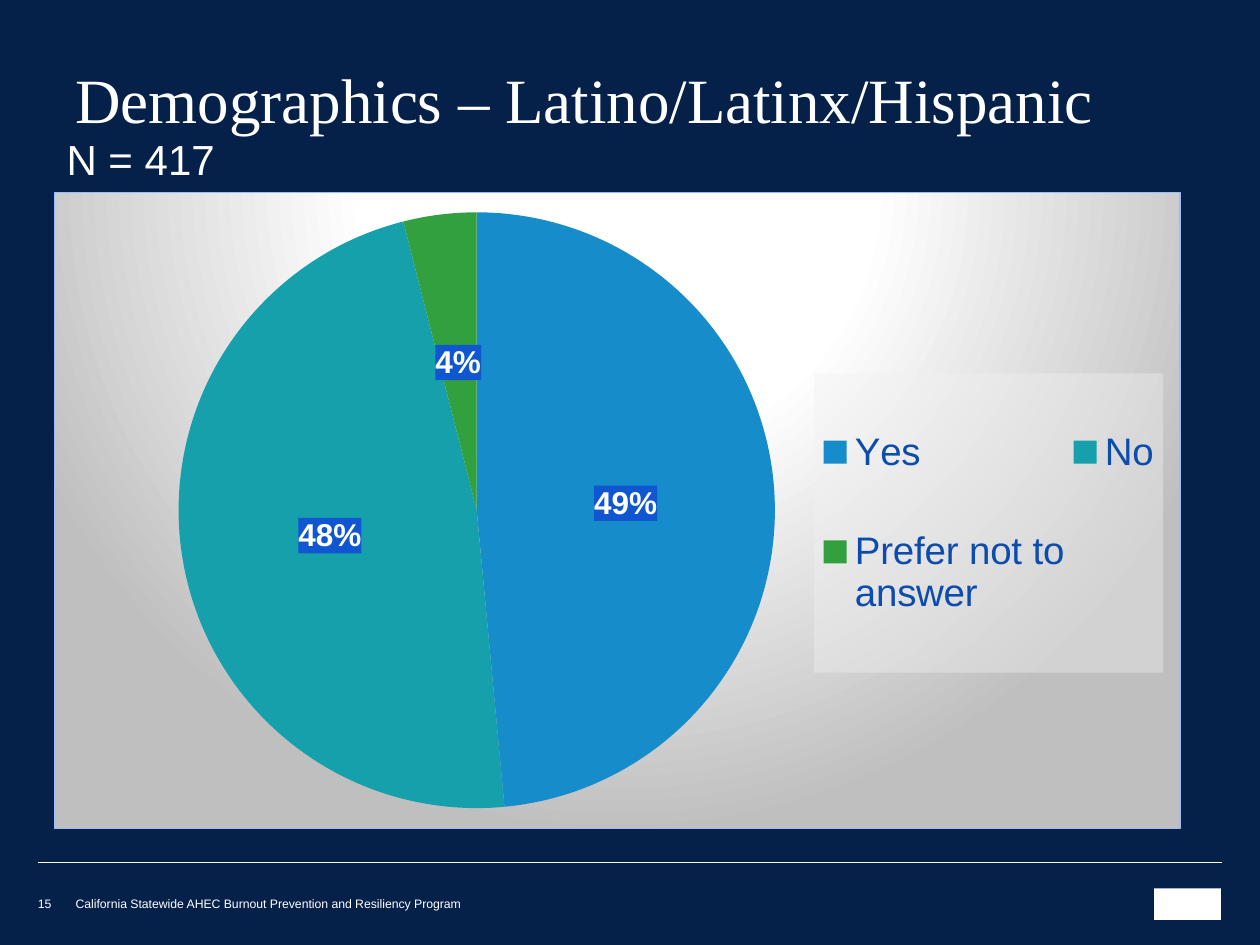
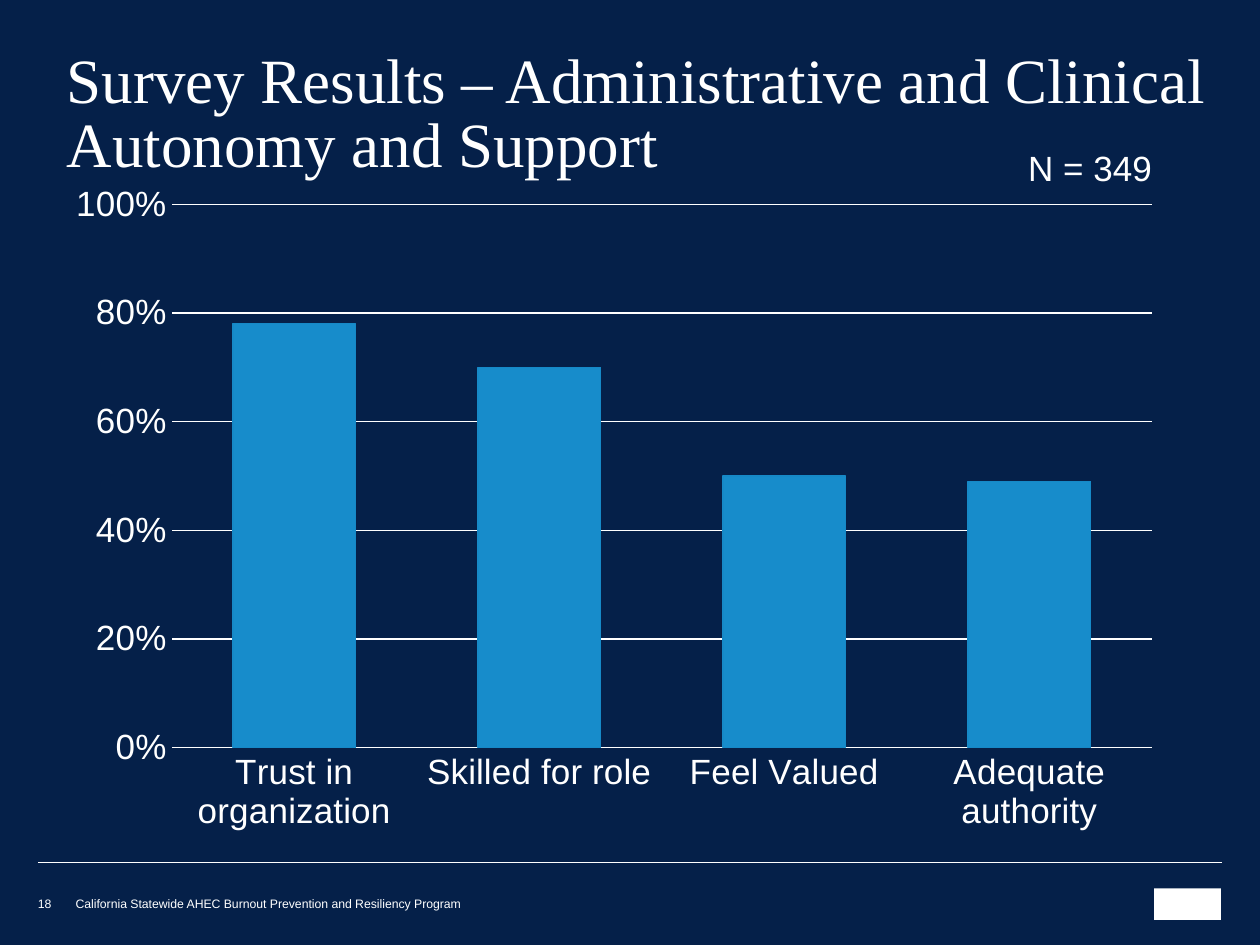
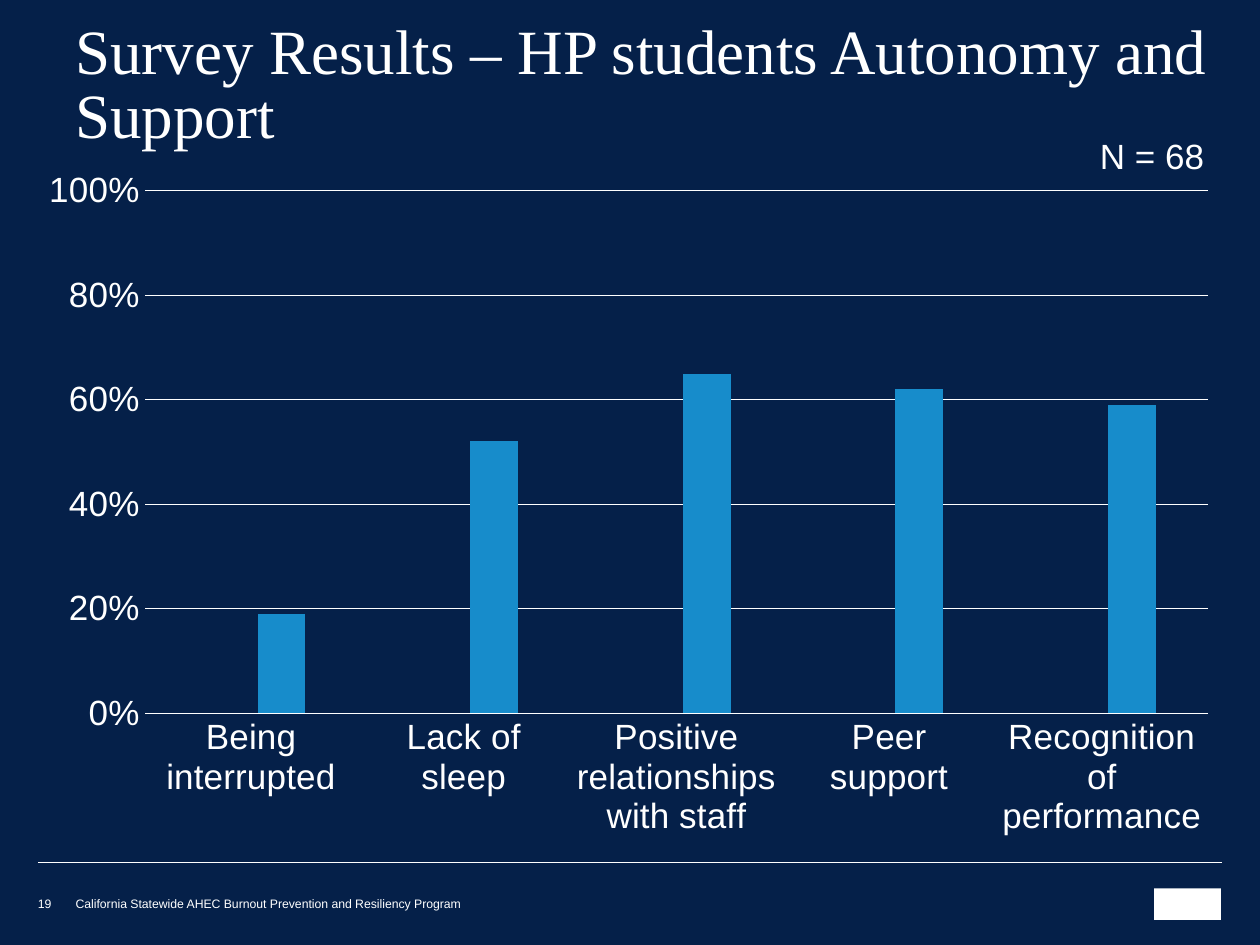
from lxml.etree import SubElement
from pptx import Presentation
from pptx.chart.data import CategoryChartData
from pptx.dml.color import RGBColor
from pptx.enum.chart import XL_CHART_TYPE as ChartType
from pptx.enum.chart import XL_LABEL_POSITION as LabelPosition
from pptx.enum.chart import XL_LEGEND_POSITION as LegendPosition
from pptx.enum.chart import XL_TICK_MARK as TickMark
from pptx.enum.shapes import MSO_CONNECTOR as Connector
from pptx.enum.shapes import MSO_SHAPE as Shape
from pptx.enum.text import MSO_ANCHOR as Anchor
from pptx.enum.text import MSO_AUTO_SIZE as AutoSize
from pptx.oxml import parse_xml
from pptx.oxml.ns import nsdecls, qn
from pptx.util import Inches, Pt

NAVY = RGBColor(0x05, 0x20, 0x49)
WHITE = RGBColor(0xFF, 0xFF, 0xFF)
BLUE = RGBColor(0x17, 0x8C, 0xCB)
BLUE_EDGE = RGBColor(0x16, 0x89, 0xC7)
TEAL = RGBColor(0x16, 0xA0, 0xAC)
GREEN = RGBColor(0x32, 0xA0, 0x3E)
LEGEND_BLUE = RGBColor(0x0C, 0x4C, 0xAE)
LABEL_BLUE = RGBColor(0x0F, 0x56, 0xD0)
PALE_BLUE = RGBColor(0x9A, 0xBF, 0xF8)
SILVER = RGBColor(0xBF, 0xBF, 0xBF)
PALE_GREY = RGBColor(0xF2, 0xF2, 0xF2)

SANS, SERIF = "Arial", "Times New Roman"
TITLE = {"name": SERIF, "size": Pt(36)}
FOOTER = {"name": SANS, "size": Pt(7)}
COUNT = {"name": SANS, "size": Pt(20)}
BODY = {"name": SANS, "size": Pt(24)}
NO_INSET = (0, 0, 0, 0)
FOOTER_TEXT = "California Statewide AHEC Burnout Prevention and Resiliency Program"

SLIDES = [
    {
        "number": 15,
        "title": "Demographics – Latino/Latinx/Hispanic",
        "title_at": (0.5, 0.46, 8.94, 0.67),
        "count": "N = 417",
        "count_at": (0.43, 1.01, 8.93, 0.52),
        "kind": "pie",
        "chart_at": (0.43, 1.52, 8.94, 5.06),
        "plot_at": (0.11, 0.03, 0.53, 0.94),
        "legend_at": (0.675, 0.285, 0.31, 0.47),
        "categories": ["Yes", "No", "Prefer not to answer"],
        "series": [[49, 48, 4]],
        "colors": [BLUE, TEAL, GREEN],
    },
    {
        "number": 18,
        "title": "Survey Results – Administrative and Clinical Autonomy and Support",
        "title_at": (0.43, 0.81, 9.29, 0.67),
        "count": "N = 349",
        "count_at": (8.16, 1.16, 0.99, 0.34),
        "kind": "columns",
        "chart_at": (0.42, 1.36, 8.9, 5.35),
        "plot_at": (0.106, 0.049, 0.874, 0.806),
        "categories": ["Trust in organization", "Skilled for role",
                       "Feel Valued", "Adequate authority"],
        "series": [[0.78, 0.7, 0.5, 0.49]],
        "gap": 100,
        "overlap": -24,
        "edge": BLUE_EDGE,
    },
    {
        "number": 19,
        "title": "Survey Results – HP students Autonomy and Support",
        "title_at": (0.5, 0.46, 9.29, 0.79),
        "count": "N = 68",
        "count_at": (8.73, 1.07, 0.83, 0.34),
        "kind": "columns",
        "chart_at": (0.2, 1.25, 9.59, 5.5),
        "plot_at": (0.099, 0.048, 0.88, 0.754),
        "categories": ["Being interrupted", "Lack of sleep",
                       "Positive relationships with staff",
                       "Peer support", "Recognition of performance"],
        "series": [[None] * 5, [0.19, 0.52, 0.65, 0.62, 0.59]],
        "gap": 219,
        "overlap": -27,
    },
]


def inches(place):
    return [Inches(length) for length in place]


def style_font(font, color=WHITE, **values):
    for name, value in values.items():
        setattr(font, name, value)
    font.color.rgb = color


def add_text(page, text, place, style, anchor=Anchor.TOP, insets=None,
             wrap=True, **spacing):
    box = page.shapes.add_textbox(*inches(place))
    frame = box.text_frame
    frame.word_wrap = wrap
    frame.vertical_anchor = anchor
    frame.auto_size = AutoSize.NONE if wrap else AutoSize.SHAPE_TO_FIT_TEXT
    if insets:
        for side, inset in zip(("left", "top", "right", "bottom"), insets):
            setattr(frame, f"margin_{side}", inset)
    para = frame.paragraphs[0]
    for name, value in spacing.items():
        setattr(para, name, value)
    span = para.add_run()
    span.text = text
    style_font(span.font, **style)


def add_footer(page, number):
    rule = page.shapes.add_connector(
        Connector.STRAIGHT, *inches((0.3, 6.84, 9.7, 6.84)))
    rule.line.color.rgb = WHITE
    rule.line.width = Pt(0.25)
    SubElement(rule._element.spPr, qn("a:effectLst"))
    badge = page.shapes.add_shape(
        Shape.RECTANGLE, *inches((9.16, 7.05, 0.53, 0.25)))
    badge.shadow.inherit = False
    badge.fill.solid()
    badge.fill.fore_color.rgb = WHITE
    badge.line.fill.background()
    for text, place in ((FOOTER_TEXT, (0.6, 7.08, 4.71, 0.15)),
                        (str(number), (0.3, 7.06, 0.27, 0.17))):
        add_text(page, text, place, FOOTER, Anchor.BOTTOM, NO_INSET)


def manual_layout(place, inner=False):
    target = '<c:layoutTarget val="inner"/>' if inner else ""
    modes = "".join(f'<c:{side}Mode val="edge"/>' for side in "xy")
    sizes = "".join(f'<c:{side} val="{share}"/>' for side, share in zip("xywh", place))
    return parse_xml(f'<c:layout {nsdecls("c")}><c:manualLayout>{target}{modes}{sizes}'
                     '</c:manualLayout></c:layout>')


def shape_properties(content):
    return parse_xml(f'<c:spPr {nsdecls("c", "a")}>{content}</c:spPr>')


def solid_fill(color, alpha=100):
    return (f'<a:solidFill><a:srgbClr val="{color}">'
            f'<a:alpha val="{alpha * 1000}"/></a:srgbClr></a:solidFill>')


def add_chart(page, content, chart_type):
    data = CategoryChartData()
    data.categories = content["categories"]
    for index, values in enumerate(content["series"], 1):
        data.add_series(f"Series {index}", values)
    chart = page.shapes.add_chart(chart_type, *inches(content["chart_at"]), data).chart
    chart.has_title = False
    chart.has_legend = False
    style_font(chart.font, name=SANS, size=Pt(10))
    plot_area = chart._chartSpace.chart.plotArea
    for layout in plot_area.findall(qn("c:layout")):
        plot_area.remove(layout)
    plot_area.insert(0, manual_layout(content["plot_at"], inner=True))
    return chart


def add_backdrop(chart):
    stops = "".join(f'<a:gs pos="{share * 1000}"><a:srgbClr val="{color}"/></a:gs>'
                    for share, color in ((0, WHITE), (39, WHITE), (100, SILVER)))
    chart._chartSpace.chart.addnext(shape_properties(
        f'<a:gradFill><a:gsLst>{stops}</a:gsLst><a:path path="circle">'
        '<a:fillToRect l="50000" t="-80000" r="50000" b="180000"/></a:path></a:gradFill>'
        f'<a:ln w="{Pt(0.75)}">{solid_fill(PALE_BLUE)}</a:ln>'))


def add_legend(chart, place):
    chart.has_legend = True
    legend = chart.legend
    legend.position = LegendPosition.RIGHT
    legend.include_in_layout = False
    style_font(legend.font, LEGEND_BLUE, name=SANS, size=Pt(22))
    element = legend._element
    element.find(qn("c:legendPos")).addnext(manual_layout(place))
    element.find(qn("c:txPr")).addprevious(shape_properties(solid_fill(PALE_GREY, 39)))


def add_pie(page, content):
    chart = add_chart(page, content, ChartType.PIE)
    add_backdrop(chart)
    add_legend(chart, content["legend_at"])
    chart.plots[0].vary_by_categories = True
    series = chart.plots[0].series[0]
    for index, color in enumerate(content["colors"]):
        fill = series.points[index].format.fill
        fill.solid()
        fill.fore_color.rgb = color
    labels = series.data_labels
    for name, value in {"show_percentage": True, "show_value": False,
                        "number_format": "0%", "number_format_is_linked": False,
                        "position": LabelPosition.CENTER}.items():
        setattr(labels, name, value)
    style_font(labels.font, name=SANS, size=Pt(18), bold=True)
    labels._element.find(qn("c:txPr")).addprevious(
        shape_properties(solid_fill(LABEL_BLUE)))


def add_columns(page, content):
    chart = add_chart(page, content, ChartType.COLUMN_CLUSTERED)
    plot = chart.plots[0]
    plot.vary_by_categories = False
    plot.gap_width = content["gap"]
    plot.overlap = content["overlap"]
    for series in plot.series:
        series.format.fill.solid()
        series.format.fill.fore_color.rgb = BLUE
        if "edge" in content:
            series.format.line.color.rgb = content["edge"]
            series.format.line.width = Pt(0.75)
    shares = chart.value_axis
    for axis in (chart.category_axis, shares):
        axis.major_tick_mark = axis.minor_tick_mark = TickMark.NONE
        style_font(axis.tick_labels.font, name=SANS, size=Pt(20))
    for name, value in {"minimum_scale": 0, "maximum_scale": 1, "major_unit": 0.2,
                        "has_major_gridlines": True}.items():
        setattr(shares, name, value)
    shares.tick_labels.number_format = "0%"
    shares.tick_labels.number_format_is_linked = False
    shares.format.line.fill.background()
    for line in (chart.category_axis.format.line, shares.major_gridlines.format.line):
        line.color.rgb = WHITE
        line.width = Pt(0.75)


def add_page(deck, content):
    page = deck.slides.add_slide(deck.slide_layouts[6])
    add_footer(page, content["number"])
    add_text(page, content["title"], content["title_at"], TITLE, Anchor.BOTTOM,
             line_spacing=0.85)
    if content["kind"] == "pie":
        add_pie(page, content)
        add_text(page, content["count"], content["count_at"], BODY, space_after=Pt(6))
    else:
        add_columns(page, content)
        add_text(page, content["count"], content["count_at"], COUNT,
                 insets=NO_INSET, wrap=False)


def main():
    deck = Presentation()
    deck.slide_width, deck.slide_height = Inches(10), Inches(7.5)
    backdrop = deck.slide_master.background.fill
    backdrop.solid()
    backdrop.fore_color.rgb = NAVY
    for content in SLIDES:
        add_page(deck, content)
    deck.save("out.pptx")


if __name__ == "__main__":
    main()
